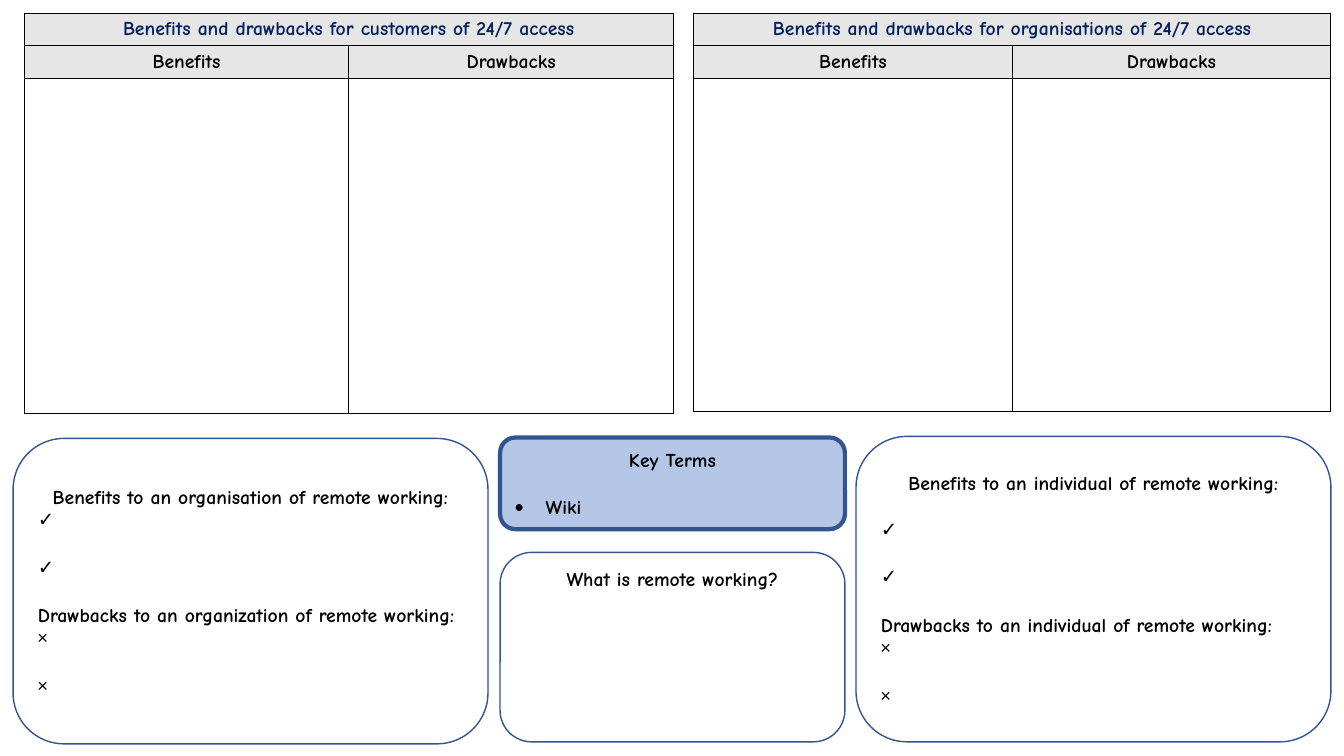
import dataclasses
import typing

import pptx
import pptx.dml.color
import pptx.enum.shapes
import pptx.enum.text
import pptx.oxml
import pptx.oxml.ns
import pptx.util
from pptx.util import Inches

COLOURS = {
    "black": "000000",
    "navy": "002060",
    "header": "E7E6E6",
    "outline": "325491",
    "key_terms": "B4C7E7",
}
FONT = "Comic Neue"
BULLET_FONT = "Calibri"
FONT_SIZE = 14
LINE_GAP = 17
BULLET_INDENT = Inches(0.31)
BORDER_WIDTH = pptx.util.Pt(0.75)
CENTRE = pptx.enum.text.PP_ALIGN.CENTER
LEFT = pptx.enum.text.PP_ALIGN.LEFT
MIDDLE = pptx.enum.text.MSO_ANCHOR.MIDDLE
TOP = pptx.enum.text.MSO_ANCHOR.TOP


@dataclasses.dataclass
class AccessTable:
    audience: str
    left: float
    column_width: float
    body_height: float


@dataclasses.dataclass
class Line:
    text: str = " "
    bullet: str = ""
    centred: bool = False
    gap: int = 0


@dataclasses.dataclass
class Panel:
    left: float
    top: float
    width: float
    height: float
    lines: list[Line]
    fill: str = ""
    outline_width: float = 1
    anchor: pptx.enum.text.MSO_ANCHOR = MIDDLE


def remote_working_lines(benefits: str, drawbacks: str, first_gap: int) -> list[Line]:
    return [
        Line(f"Benefits to an {benefits} of remote working:", centred=True),
        Line(bullet="✓", gap=first_gap),
        Line(bullet="✓", gap=LINE_GAP),
        Line(f"Drawbacks to an {drawbacks} of remote working:", gap=LINE_GAP),
        Line(bullet="×"),
        Line(bullet="×", gap=LINE_GAP),
    ]


TABLES = [
    AccessTable("customers", 0.24, 3.22, 3.32),
    AccessTable("organisations", 6.88, 3.16, 3.3),
]
PANELS = [
    Panel(4.96, 4.34, 3.42, 0.91,
          [Line("Key Terms", centred=True), Line("Wiki", "•", gap=LINE_GAP)],
          fill="key_terms", outline_width=3),
    Panel(8.49, 4.33, 4.71, 3.03,
          remote_working_lines("individual", "individual", LINE_GAP)),
    Panel(4.96, 5.48, 3.42, 1.88,
          [Line("What is remote working?", centred=True)], anchor=TOP),
    Panel(0.13, 4.35, 4.71, 3.03,
          remote_working_lines("organisation", "organization", 0)),
]


def rgb(name: str) -> pptx.dml.color.RGBColor:
    return pptx.dml.color.RGBColor.from_string(COLOURS[name])


def set_values(target: typing.Any, values: dict[str, typing.Any]) -> None:
    for name, value in values.items():
        setattr(target, name, value)


def write_span(para: typing.Any, text: str, colour: str = "black") -> None:
    span = para.add_run()
    span.text = text
    set_values(span.font, {"name": FONT, "size": pptx.util.Pt(FONT_SIZE), "bold": True})
    span.font.color.rgb = rgb(colour)


def add_bullet(para: typing.Any, character: str) -> None:
    """Give the paragraph a hanging bullet."""
    properties = para._p.get_or_add_pPr()
    properties.set("marL", str(BULLET_INDENT))
    properties.set("indent", str(-BULLET_INDENT))
    font = pptx.oxml.ns.qn("a:buFont")
    mark = pptx.oxml.ns.qn("a:buChar")
    properties.append(properties.makeelement(font, {"typeface": BULLET_FONT}))
    properties.append(properties.makeelement(mark, {"char": character}))


def add_borders(cell: typing.Any) -> None:
    """Draw the four cell borders, which must precede the cell fill."""
    namespace = pptx.oxml.ns.nsdecls("a")
    properties = cell._tc.get_or_add_tcPr()
    for index, side in enumerate(("lnL", "lnR", "lnT", "lnB")):
        properties.insert(index, pptx.oxml.parse_xml(
            f'<a:{side} {namespace} w="{BORDER_WIDTH}"><a:solidFill>'
            f'<a:srgbClr val="{COLOURS["black"]}"/></a:solidFill></a:{side}>'))


def write_header(cell: typing.Any, text: str, colour: str = "black") -> None:
    para = cell.text_frame.paragraphs[0]
    para.alignment = CENTRE
    write_span(para, text, colour)


def draw_table(page: typing.Any, access: AccessTable) -> None:
    heights = (0.32, 0.32, access.body_height)
    table = page.shapes.add_table(
        3, 2, Inches(access.left), Inches(0.13),
        Inches(2 * access.column_width), Inches(sum(heights))).table
    set_values(table, {"first_row": False, "horz_banding": False})
    for column in table.columns:
        column.width = Inches(access.column_width)
    for index, (row, height) in enumerate(zip(table.rows, heights)):
        row.height = Inches(height)
        for cell in row.cells:
            if index < 2:
                cell.fill.solid()
                cell.fill.fore_color.rgb = rgb("header")
            else:
                cell.fill.background()
            add_borders(cell)
    table.cell(0, 0).merge(table.cell(0, 1))
    title = f"Benefits and drawbacks for {access.audience} of 24/7 access"
    write_header(table.cell(0, 0), title, "navy")
    for column, heading in enumerate(("Benefits", "Drawbacks")):
        write_header(table.cell(1, column), heading)


def draw_panel(page: typing.Any, panel: Panel) -> None:
    box = page.shapes.add_shape(
        pptx.enum.shapes.MSO_SHAPE.ROUNDED_RECTANGLE,
        Inches(panel.left), Inches(panel.top),
        Inches(panel.width), Inches(panel.height))
    box.shadow.inherit = False
    if panel.fill:
        box.fill.solid()
        box.fill.fore_color.rgb = rgb(panel.fill)
    else:
        box.fill.background()
    box.line.color.rgb = rgb("outline")
    box.line.width = pptx.util.Pt(panel.outline_width)
    frame = box.text_frame
    set_values(frame, {"word_wrap": True, "vertical_anchor": panel.anchor})
    for index, line in enumerate(panel.lines):
        para = frame.add_paragraph() if index else frame.paragraphs[0]
        set_values(para, {
            "alignment": CENTRE if line.centred else LEFT,
            "space_before": pptx.util.Pt(line.gap),
        })
        if line.bullet:
            add_bullet(para, line.bullet)
        write_span(para, line.text)


def main() -> None:
    deck = pptx.Presentation()
    set_values(deck, {"slide_width": Inches(13.33), "slide_height": Inches(7.5)})
    page = deck.slides.add_slide(deck.slide_layouts[6])
    for access in TABLES:
        draw_table(page, access)
    for panel in PANELS:
        draw_panel(page, panel)
    deck.save("out.pptx")


if __name__ == "__main__":
    main()
